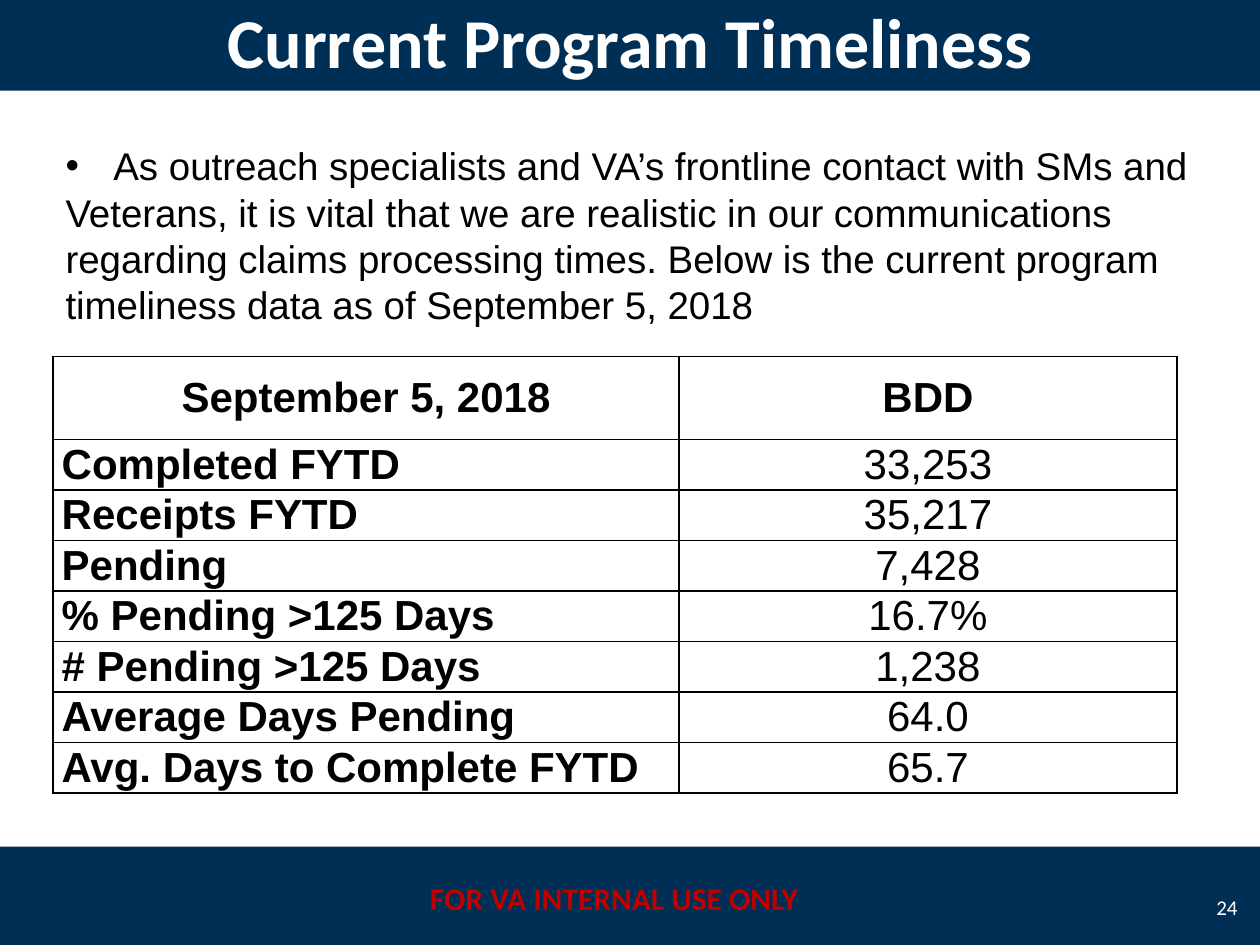
from dataclasses import dataclass

from lxml import etree
from pptx import Presentation
from pptx import util as u
from pptx.dml.color import RGBColor
from pptx.enum import shapes, text
from pptx.oxml.ns import qn

NAVY = RGBColor(0x00, 0x2F, 0x56)
WHITE = RGBColor(0xFF, 0xFF, 0xFF)
BLACK = RGBColor(0x00, 0x00, 0x00)
RED = RGBColor(0xC0, 0x00, 0x00)
WIDTH, HEIGHT = 10, 7.5
BAND_HEIGHT = 0.8
MARGIN = 0.42
CENTER, LEFT, RIGHT = text.PP_ALIGN.CENTER, text.PP_ALIGN.LEFT, text.PP_ALIGN.RIGHT


@dataclass
class Area:
    left: float
    top: float
    width: float
    height: float

    def lengths(self) -> list:
        return [u.Inches(v) for v in (self.left, self.top, self.width, self.height)]


@dataclass
class Style:
    size: float
    font: str = "Arial"
    color: RGBColor = BLACK
    bold: bool = False
    align: int = LEFT


TOP_BAND = Area(0, -0.08, WIDTH, BAND_HEIGHT)
BOTTOM_BAND = Area(0, 6.72, WIDTH, BAND_HEIGHT)
TITLE = Style(40, "Calibri", WHITE, True, CENTER)
FOOTER = Style(18, "Calibri", RED, True, CENTER)
NUMBER = Style(12, "Calibri", WHITE, align=RIGHT)
BODY = Style(22)
LABEL = Style(24, bold=True)
HEADING = Style(24, bold=True, align=CENTER)
VALUE = Style(24, align=CENTER)

INTRO = [
    "As outreach specialists and VA’s frontline contact with SMs and",
    "Veterans, it is vital that we are realistic in our communications regarding "
    "claims processing times. Below is the current program timeliness data as of "
    "September 5, 2018",
]
ROWS = [
    ("September 5, 2018", "BDD"),
    ("Completed FYTD", "33,253"),
    ("Receipts FYTD", "35,217"),
    ("Pending", "7,428"),
    ("% Pending >125 Days", "16.7%"),
    ("# Pending >125 Days", "1,238"),
    ("Average Days Pending", "64.0"),
    ("Avg. Days to Complete FYTD", "65.7"),
]
COLUMN_WIDTHS = (4.97, 3.95)
HEADING_HEIGHT, ROW_HEIGHT = 0.66, 0.4


def write(para, words: str, style: Style) -> None:
    para.alignment = style.align
    span = para.add_run()
    span.text = words
    span.font.size = u.Pt(style.size)
    span.font.name = style.font
    span.font.bold = style.bold
    span.font.color.rgb = style.color


def place(box, area: Area) -> None:
    box.left, box.top, box.width, box.height = area.lengths()


def add_band(page, area: Area) -> None:
    band = page.shapes.add_shape(shapes.MSO_SHAPE.RECTANGLE, *area.lengths())
    band.shadow.inherit = False
    band.fill.solid()
    band.fill.fore_color.rgb = NAVY
    band.line.fill.background()


def add_label(page, area: Area, words: str, style: Style, anchor) -> None:
    frame = page.shapes.add_textbox(*area.lengths()).text_frame
    frame.word_wrap = True
    frame.vertical_anchor = anchor
    write(frame.paragraphs[0], words, style)


def set_indent(para, margin: float, indent: float, bullet: str = "") -> None:
    properties = para._p.get_or_add_pPr()
    properties.set("marL", str(u.Inches(margin)))
    properties.set("indent", str(u.Inches(indent)))
    if bullet:
        etree.SubElement(properties, qn("a:buChar"), char=bullet)
    else:
        etree.SubElement(properties, qn("a:buNone"))


def add_borders(cell) -> None:
    properties = cell._tc.get_or_add_tcPr()
    for side in ("lnL", "lnR", "lnT", "lnB"):
        line = etree.SubElement(properties, qn(f"a:{side}"), w=str(u.Pt(1)))
        fill = etree.SubElement(line, qn("a:solidFill"))
        etree.SubElement(fill, qn("a:srgbClr"), val=str(BLACK))


def fill_cell(cell, words: str, style: Style) -> None:
    add_borders(cell)
    cell.fill.background()
    cell.margin_left = cell.margin_right = u.Inches(0.07)
    cell.margin_top = cell.margin_bottom = 0
    cell.vertical_anchor = text.MSO_ANCHOR.MIDDLE
    write(cell.text_frame.paragraphs[0], words, style)


def add_timeliness_table(page) -> None:
    heights = [HEADING_HEIGHT] + [ROW_HEIGHT] * (len(ROWS) - 1)
    area = Area(MARGIN, 2.83, sum(COLUMN_WIDTHS), sum(heights))
    table = page.shapes.add_table(len(ROWS), len(COLUMN_WIDTHS), *area.lengths()).table
    table.first_row = table.horz_banding = False
    for column, width in zip(table.columns, COLUMN_WIDTHS):
        column.width = u.Inches(width)
    for index, (row, height) in enumerate(zip(table.rows, heights)):
        row.height = u.Inches(height)
        styles = (LABEL, VALUE) if index else (HEADING, HEADING)
        for cell, words, style in zip(row.cells, ROWS[index], styles):
            fill_cell(cell, words, style)


def main() -> None:
    deck = Presentation()
    deck.slide_width, deck.slide_height = u.Inches(WIDTH), u.Inches(HEIGHT)
    page = deck.slides.add_slide(deck.slide_layouts[1])
    title, body = page.shapes.title, page.placeholders[1]

    # Bands and footer
    for area in (BOTTOM_BAND, TOP_BAND):
        add_band(page, area)
    add_label(page, Area(3.25, 6.93, 3.25, 0.4), "FOR VA INTERNAL USE ONLY",
              FOOTER, text.MSO_ANCHOR.TOP)

    # Title, brought in front of its band
    page.shapes._spTree.append(title._element)
    place(title, TOP_BAND)
    title.text_frame.auto_size = text.MSO_AUTO_SIZE.NONE
    title.text_frame.vertical_anchor = text.MSO_ANCHOR.MIDDLE
    write(title.text_frame.paragraphs[0], "Current Program Timeliness", TITLE)

    add_label(page, Area(9.5, 7, 0.42, 0.4), "24", NUMBER, text.MSO_ANCHOR.MIDDLE)

    # Introduction
    place(body, Area(MARGIN, 1.08, 9.5, 1.58))
    frame = body.text_frame
    frame.auto_size = text.MSO_AUTO_SIZE.NONE
    first, second = frame.paragraphs[0], frame.add_paragraph()
    set_indent(first, 0.38, -0.38, "•")
    set_indent(second, 0, 0)
    for para, words in zip((first, second), INTRO):
        para.space_before = u.Pt(0)
        write(para, words, BODY)

    # Timeliness figures
    add_timeliness_table(page)
    deck.save("out.pptx")


if __name__ == "__main__":
    main()
